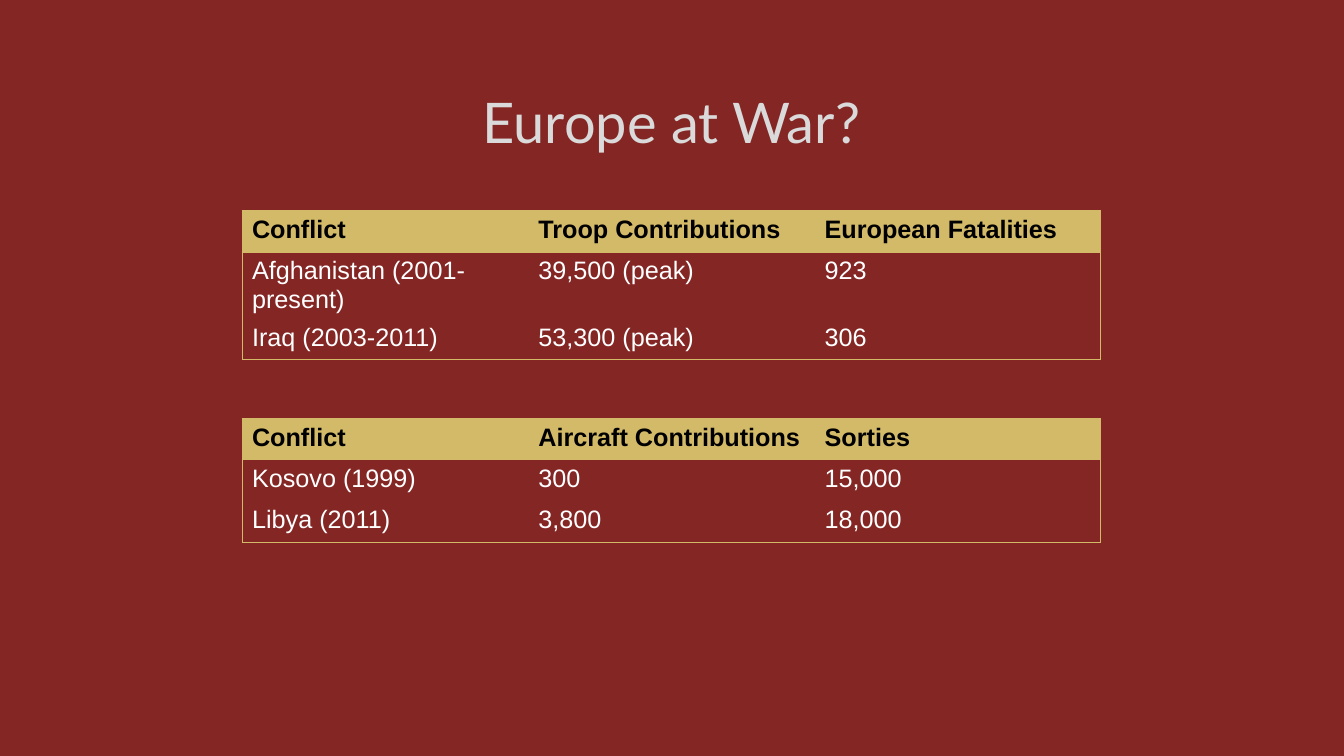
from lxml.etree import SubElement
from pptx import Presentation
from pptx.dml.color import RGBColor
from pptx.enum.text import MSO_ANCHOR, PP_ALIGN
from pptx.oxml import parse_xml
from pptx.oxml.ns import nsdecls, qn
from pptx.util import Inches, Pt

BACKGROUND = "842624"
GOLD = "D3BA68"
TABLE_LEFT = 2.4
COLUMN_WIDTH = 2.84
ROW_HEIGHT = 0.41
NO_STYLE = "{2D5ABB26-0587-4C30-8999-92F81FD0307C}"

TROOPS = [
    ("Conflict", "Troop Contributions", "European Fatalities"),
    ("Afghanistan (2001-present)", "39,500 (peak)", "923"),
    ("Iraq (2003-2011)", "53,300 (peak)", "306"),
]
AIRCRAFT = [
    ("Conflict", "Aircraft Contributions", "Sorties"),
    ("Kosovo (1999)", "300", "15,000"),
    ("Libya (2011)", "3,800", "18,000"),
]


def paint(color_format, color):
    color_format.rgb = RGBColor.from_string(color)


def fill_solid(fill, color):
    fill.solid()
    paint(fill.fore_color, color)


def write(text_frame, text, size=18, font="Arial", color="FFFFFF", bold=False, align=PP_ALIGN.LEFT):
    paragraph = text_frame.paragraphs[0]
    paragraph.alignment = align
    run = paragraph.add_run()
    run.text = text
    run.font.size = Pt(size)
    run.font.name = font
    run.font.bold = bold
    paint(run.font.color, color)
    return run


def add_text_shadow(run):
    effects = parse_xml(
        f'<a:effectLst {nsdecls("a")}>'
        '<a:outerShdw blurRad="50800" dist="38100" dir="2700000" algn="tl" rotWithShape="0">'
        '<a:srgbClr val="000000"><a:alpha val="40000"/></a:srgbClr>'
        "</a:outerShdw></a:effectLst>"
    )
    run.font._element.find(qn("a:solidFill")).addnext(effects)


def add_title(slide, text):
    title = slide.shapes.title
    title.left, title.top, title.width, title.height = map(Inches, (1, 0.67, 11.32, 1.06))
    title.text_frame.vertical_anchor = MSO_ANCHOR.MIDDLE
    run = write(title.text_frame, text, size=40, font="Lato", color="DADADA", align=PP_ALIGN.CENTER)
    add_text_shadow(run)


def set_borders(cell, sides):
    properties = cell._tc.get_or_add_tcPr()
    for side in "LRTB":
        line = SubElement(properties, qn(f"a:ln{side}"), w=str(Pt(0.75)))
        if side in sides:
            fill = SubElement(line, qn("a:solidFill"))
            SubElement(fill, qn("a:srgbClr"), val=GOLD)
        else:
            SubElement(line, qn("a:noFill"))


def outer_sides(row, column, row_count, column_count):
    edges = {
        "L": column == 0,
        "R": column == column_count - 1,
        "T": row <= 1,
        "B": row in (0, row_count - 1),
    }
    return [side for side, is_edge in edges.items() if is_edge]


def add_conflict_table(slide, top, rows):
    row_count, column_count = len(rows), len(rows[0])
    frame = slide.shapes.add_table(
        row_count, column_count, Inches(TABLE_LEFT), Inches(top),
        Inches(COLUMN_WIDTH * column_count), Inches(ROW_HEIGHT * row_count),
    )
    table = frame.table
    table.horz_banding = False
    table._tbl.tblPr.find(qn("a:tableStyleId")).text = NO_STYLE
    for row, values in enumerate(rows):
        is_header = row == 0
        for column, value in enumerate(values):
            cell = table.cell(row, column)
            set_borders(cell, outer_sides(row, column, row_count, column_count))
            if is_header:
                fill_solid(cell.fill, GOLD)
            else:
                cell.fill.background()
            write(cell.text_frame, value, color="000000" if is_header else "FFFFFF", bold=is_header)


def main():
    presentation = Presentation()
    presentation.slide_width = Inches(13.33)
    presentation.slide_height = Inches(7.5)
    slide = presentation.slides.add_slide(presentation.slide_layouts[5])
    fill_solid(slide.background.fill, BACKGROUND)
    add_title(slide, "Europe at War?")
    add_conflict_table(slide, 2.09, TROOPS)
    add_conflict_table(slide, 4.15, AIRCRAFT)
    presentation.save("out.pptx")


if __name__ == "__main__":
    main()
